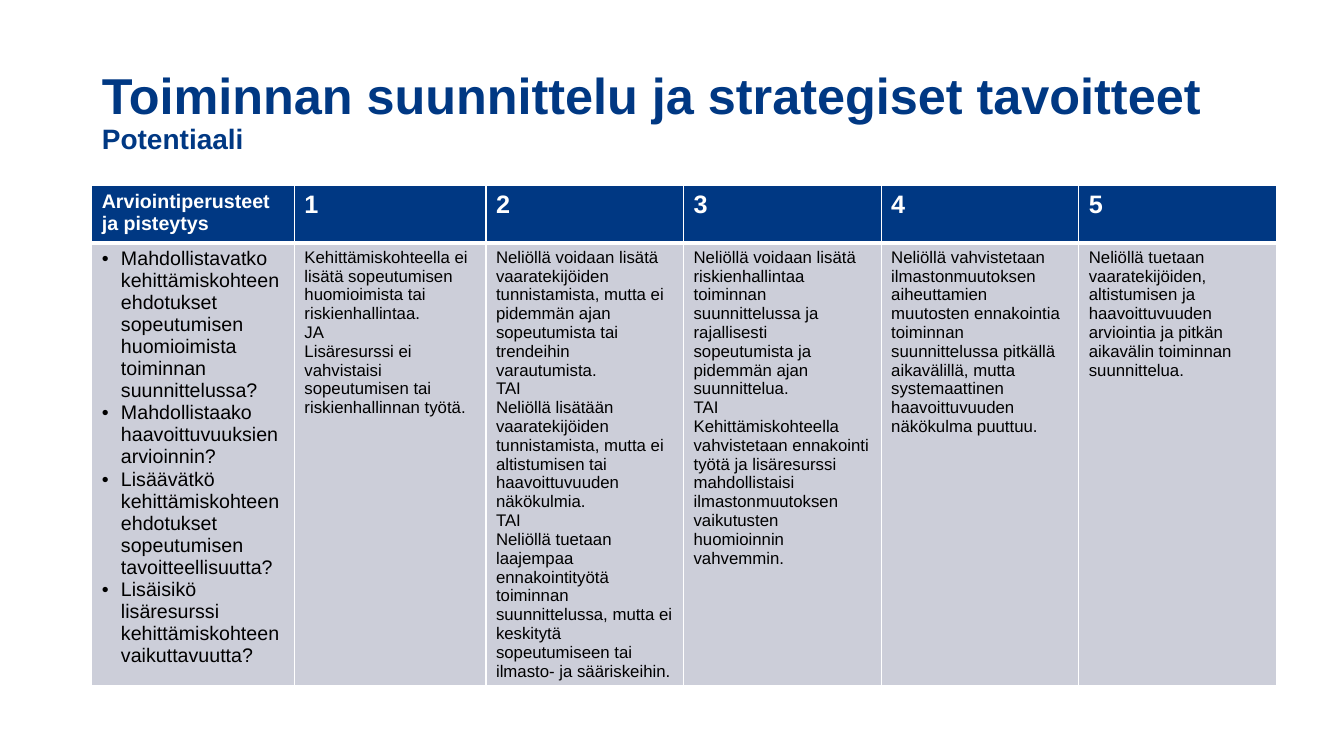
import lxml.etree
import pptx
import pptx.dml.color
import pptx.enum.text
import pptx.oxml.ns
import pptx.util

Inches, Pt = pptx.util.Inches, pptx.util.Pt
qn = pptx.oxml.ns.qn

FONT = "Arial"
NAVY, GREY, WHITE, BLACK = "003883", "CCCED9", "FFFFFF", "000000"
COLUMNS = [2.01, 1.9] + [1.96] * 4
ROWS = [0.57, 4.39]

HEADERS = ["Arviointiperusteet ja pisteytys", "1", "2", "3", "4", "5"]
CRITERIA = [
    ["Mahdollistavatko kehittämiskohteen ehdotukset sopeutumisen huomioimista toiminnan suunnittelussa?",
     "Mahdollistaako haavoittuvuuksien arvioinnin?",
     "Lisäävätkö kehittämiskohteen ehdotukset sopeutumisen tavoitteellisuutta?",
     "Lisäisikö lisäresurssi kehittämiskohteen vaikuttavuutta?"],
    ["Kehittämiskohteella ei lisätä sopeutumisen huomioimista tai riskienhallintaa.",
     "JA",
     "Lisäresurssi ei vahvistaisi sopeutumisen tai riskienhallinnan työtä."],
    ["Neliöllä voidaan lisätä vaaratekijöiden tunnistamista, mutta ei pidemmän ajan sopeutumista "
     "tai trendeihin varautumista.",
     "TAI",
     "Neliöllä lisätään vaaratekijöiden tunnistamista, mutta ei altistumisen tai haavoittuvuuden näkökulmia.",
     "TAI",
     "Neliöllä tuetaan laajempaa ennakointityötä toiminnan suunnittelussa, mutta ei keskitytä "
     "sopeutumiseen tai ilmasto- ja sääriskeihin."],
    ["Neliöllä voidaan lisätä riskienhallintaa toiminnan suunnittelussa ja rajallisesti sopeutumista "
     "ja pidemmän ajan suunnittelua.",
     "TAI",
     "Kehittämiskohteella vahvistetaan ennakointi työtä ja lisäresurssi mahdollistaisi "
     "ilmastonmuutoksen vaikutusten huomioinnin vahvemmin."],
    ["Neliöllä vahvistetaan ilmastonmuutoksen aiheuttamien muutosten ennakointia toiminnan "
     "suunnittelussa pitkällä aikavälillä, mutta systemaattinen haavoittuvuuden näkökulma puuttuu."],
    ["Neliöllä tuetaan vaaratekijöiden, altistumisen ja haavoittuvuuden arviointia ja pitkän "
     "aikavälin toiminnan suunnittelua."],
]


def rgb(color):
    return pptx.dml.color.RGBColor.from_string(color)


def style_font(font, size, color, bold):
    font.name, font.size, font.bold = FONT, Pt(size), bold
    font.color.rgb = rgb(color)


def add_bullet(p):
    pPr = p._p.get_or_add_pPr()
    pPr.set("marL", str(Inches(0.19)))
    pPr.set("indent", str(Inches(-0.19)))
    lxml.etree.SubElement(pPr, qn("a:buFont")).set("typeface", FONT)
    lxml.etree.SubElement(pPr, qn("a:buChar")).set("char", "•")


def set_borders(cell, top, bottom):
    """Draw white borders, with the top and bottom widths in points."""
    tcPr = cell._tc.get_or_add_tcPr()
    sides = [("L", 1), ("R", 1), ("T", top), ("B", bottom)]
    for i, (side, width) in enumerate(sides):
        ln = lxml.etree.Element(qn(f"a:ln{side}"), w=str(Pt(width)))
        fill = lxml.etree.SubElement(ln, qn("a:solidFill"))
        lxml.etree.SubElement(fill, qn("a:srgbClr")).set("val", WHITE)
        tcPr.insert(i, ln)


def fill_cell(cell, paragraphs, size, color, fill, bold=False, bullets=False):
    cell.fill.solid()
    cell.fill.fore_color.rgb = rgb(fill)
    tf = cell.text_frame
    tf.text = "\n".join(paragraphs)
    for p in tf.paragraphs:
        if bullets:
            add_bullet(p)
        for r in p.runs:
            style_font(r.font, size, color, bold)


def add_title(slide, left, top, width, height):
    sp = slide.shapes.title
    sp.left, sp.top, sp.width, sp.height = map(Inches, (left, top, width, height))
    tf = sp.text_frame
    tf.text = "Toiminnan suunnittelu ja strategiset tavoitteet\vPotentiaali"
    tf.word_wrap = True
    tf.auto_size = pptx.enum.text.MSO_AUTO_SIZE.NONE
    tf.vertical_anchor = pptx.enum.text.MSO_ANCHOR.MIDDLE
    tf.margin_left = tf.margin_top = tf.margin_right = tf.margin_bottom = 0
    p = tf.paragraphs[0]
    p.alignment = pptx.enum.text.PP_ALIGN.LEFT
    p.line_spacing = 0.9
    for r, size in zip(p.runs, (36, 20)):
        style_font(r.font, size, NAVY, True)


def add_scoring_table(slide, left, top):
    box = map(Inches, (left, top, sum(COLUMNS), sum(ROWS)))
    table = slide.shapes.add_table(len(ROWS), len(COLUMNS), *box).table
    for row, height in zip(table.rows, ROWS):
        row.height = Inches(height)
    for i, width in enumerate(COLUMNS):
        table.columns[i].width = Inches(width)
        first = i == 0
        head, body = table.cell(0, i), table.cell(1, i)
        fill_cell(head, [HEADERS[i]], 14 if first else 18, WHITE, NAVY, bold=True)
        fill_cell(body, CRITERIA[i], 14 if first else 12, BLACK, GREY, bullets=first)
        set_borders(head, 1, 3)
        set_borders(body, 3, 1)


def main():
    prs = pptx.Presentation()
    prs.slide_width, prs.slide_height = Inches(13.33), Inches(7.5)
    slide = prs.slides.add_slide(prs.slide_layouts[5])
    add_title(slide, 1.01, 0.51, 11.63, 1.22)
    add_scoring_table(slide, 0.91, 1.84)
    prs.save("out.pptx")


if __name__ == "__main__":
    main()
